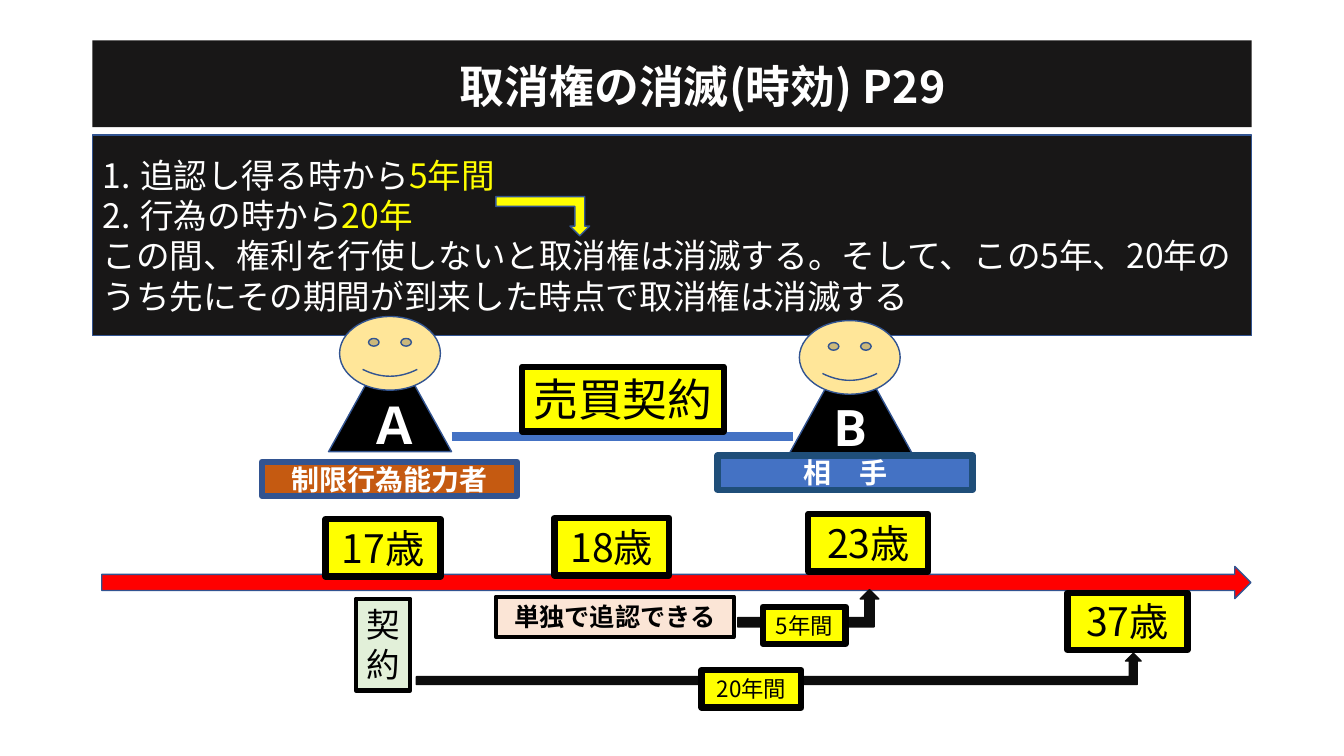
from lxml import etree
from pptx import Presentation
from pptx import util as u
from pptx.dml.color import RGBColor
from pptx.enum import shapes, text
from pptx.oxml.ns import qn

Pt = u.Pt
KIND = shapes.MSO_SHAPE
ANCHOR = text.MSO_ANCHOR
FIT = text.MSO_AUTO_SIZE
WHITE, BLACK, YELLOW = "FFFFFF", "000000", "FFFF00"
PANEL, OUTLINE, SKIN, DARK, BLUE = "181717", "325491", "FFE699", "0D0D0D", "4472C4"


def color(hex_value):
    return RGBColor.from_string(hex_value)


class SlideBuilder:
    """Holds the style and the current slide, and adds each kind of element."""

    font = "Noto Sans CJK JP"

    def __init__(self, slide):
        self.slide = slide

    def paint(self, shape, fill, line=None, width=1):
        shape.fill.solid()
        shape.fill.fore_color.rgb = color(fill)
        if line:
            shape.line.color.rgb = color(line)
            shape.line.width = Pt(width)

    def place(self, shape, box):
        shape.left, shape.top, shape.width, shape.height = map(Pt, box)

    def set_font(self, font, size, hex_value=None, bold=None, name=None):
        font.size = Pt(size)
        font.bold = bold
        font.name = name or self.font
        if hex_value:
            font.color.rgb = color(hex_value)
        etree.SubElement(font._element, qn("a:ea")).set("typeface", font.name)

    def add_lines(self, frame, lines, size, hex_value, bold=False, name=None):
        for index, line in enumerate(lines.split("\n")):
            paragraph = frame.add_paragraph() if index else frame.paragraphs[0]
            paragraph.add_run().text = line
            paragraph.alignment = text.PP_ALIGN.CENTER
            self.set_font(paragraph.font, size, hex_value, bold, name)

    def placeholder(self, shape, box, line=None):
        self.place(shape, box)
        self.paint(shape, PANEL, line)
        shape.text_frame.auto_size = FIT.NONE
        shape.text_frame.vertical_anchor = ANCHOR.MIDDLE
        return shape.text_frame

    def title(self, box, words):
        paragraph = self.placeholder(self.slide.shapes.title, box).paragraphs[0]
        paragraph.alignment = text.PP_ALIGN.CENTER
        paragraph.line_spacing = 0.9
        for part, size, hex_value, bold in (("\u3000", 44, BLACK, False), (words, 32, WHITE, True)):
            run = paragraph.add_run()
            run.text = part
            self.set_font(run.font, size, hex_value, bold)

    def rules(self, box, numbered, closing):
        frame = self.placeholder(self.slide.placeholders[1], box, OUTLINE)
        for index, parts in enumerate([*numbered, (closing,)]):
            paragraph = frame.add_paragraph() if index else frame.paragraphs[0]
            for words, hex_value in zip(parts, (WHITE, YELLOW)):
                run = paragraph.add_run()
                run.text = words
                run.font.color.rgb = color(hex_value)
            paragraph.space_before = Pt(0)
            paragraph.line_spacing = 1.0
            self.set_font(paragraph.font, 24)
            is_numbered = index < len(numbered)
            properties = paragraph._p.get_or_add_pPr()
            indent = int(Pt(27)) if is_numbered else 0
            properties.set("marL", str(indent))
            properties.set("indent", str(-indent))
            bullet = etree.Element(qn("a:buAutoNum" if is_numbered else "a:buNone"))
            if is_numbered:
                bullet.set("type", "arabicPeriod")
            properties.find(qn("a:defRPr")).addprevious(bullet)

    def shape(self, kind, box, fill, line=OUTLINE, width=1):
        shape = self.slide.shapes.add_shape(kind, *map(Pt, box))
        shape.shadow.inherit = False
        self.paint(shape, fill, line, width)
        return shape

    def person(self, body_box, face_box, letter):
        body = self.shape(KIND.ISOSCELES_TRIANGLE, body_box, BLACK)
        body.text_frame.vertical_anchor = ANCHOR.MIDDLE
        self.add_lines(body.text_frame, letter, 36, WHITE, True, "Roboto")
        self.shape(KIND.SMILEY_FACE, face_box, SKIN)

    def role(self, left, top, words, fill, line):
        plate = self.shape(KIND.RECTANGLE, (left, top, 182.2, 24.5), fill, line, 4.5)
        plate.text_frame.vertical_anchor = ANCHOR.MIDDLE
        self.add_lines(plate.text_frame, words, 20, WHITE, True)

    def label(self, box, words, size, fill=YELLOW, width=4.5, bold=False, wrap=False):
        label = self.slide.shapes.add_textbox(*map(Pt, box))
        self.paint(label, fill, BLACK, width)
        label.text_frame.word_wrap = wrap
        label.text_frame.auto_size = FIT.SHAPE_TO_FIT_TEXT
        self.add_lines(label.text_frame, words, size, BLACK, bold)

    def line(self, start, end, hex_value, width):
        line = self.slide.shapes.add_connector(
            shapes.MSO_CONNECTOR.STRAIGHT, *map(Pt, (*start, *end)))
        line.line.color.rgb = color(hex_value)
        line.line.width = Pt(width)
        etree.SubElement(line._element.spPr, qn("a:effectLst"))


def main():
    presentation = Presentation()
    presentation.slide_width, presentation.slide_height = Pt(960), Pt(540)
    slide = presentation.slides.add_slide(presentation.slide_layouts[1])
    builder = SlideBuilder(slide)

    builder.title((66, 28.8, 828, 62), "取消権の消滅(時効) P29")
    builder.rules(
        (66, 96.5, 828, 143.3),
        [("追認し得る時から", "5年間"), ("行為の時から", "20年")],
        "この間、権利を行使しないと取消権は消滅する。そして、この5年、20年の"
        "うち先にその期間が到来した時点で取消権は消滅する")
    pointer = builder.shape(KIND.BENT_UP_ARROW, (354.2, 140.4, 67, 28.1), YELLOW)
    pointer.rotation = 180
    pointer._element.spPr.xfrm.set("flipH", "1")

    builder.person((234.7, 243.4, 87.8, 79.2), (242.6, 226.1, 72, 52.6), "Ａ")
    builder.person((563.8, 244.8, 87.8, 79.2), (571, 229, 72, 52.6), "B")
    builder.line((322.6, 311.8), (566.6, 311.8), BLUE, 6)
    builder.label((373, 262.1, 144, 46.1), "売買契約", 32)
    builder.role(187.2, 329.8, "制限行為能力者", "C55A11", OUTLINE)
    builder.role(512.6, 325.4, "相\u3000手", BLUE, "1F4E79")

    builder.shape(KIND.RIGHT_ARROW, (72.7, 404.6, 820.8, 23), "FF0000")
    for age, left, top, width in ((17, 232.6, 370.8, 82), (18, 396, 370.1, 82),
                                  (23, 577.4, 367.2, 85.7), (37, 762.5, 423.4, 85.7)):
        builder.label((left, top, width, 41), f"{age}歳", 28)
    builder.label((254.2, 427.7, 38.9, 65.5), "契\n約", 24, "E2F0D9", 3)
    builder.label((354.2, 426.2, 169.9, 28.8), "単独で追認できる", 18, "FBE5D6", 3, True, True)

    for arrow_box, label_box, words in (
            ((527, 421.2, 100.8, 26.6), (545, 433.4, 59, 26.6), "5年間"),
            ((297.4, 466.6, 517.7, 22.3), (501.1, 478.8, 71.3, 26.6), "20年間")):
        builder.shape(KIND.BENT_UP_ARROW, arrow_box, DARK, DARK)
        builder.label(label_box, words, 16)

    presentation.save("out.pptx")


if __name__ == "__main__":
    main()
